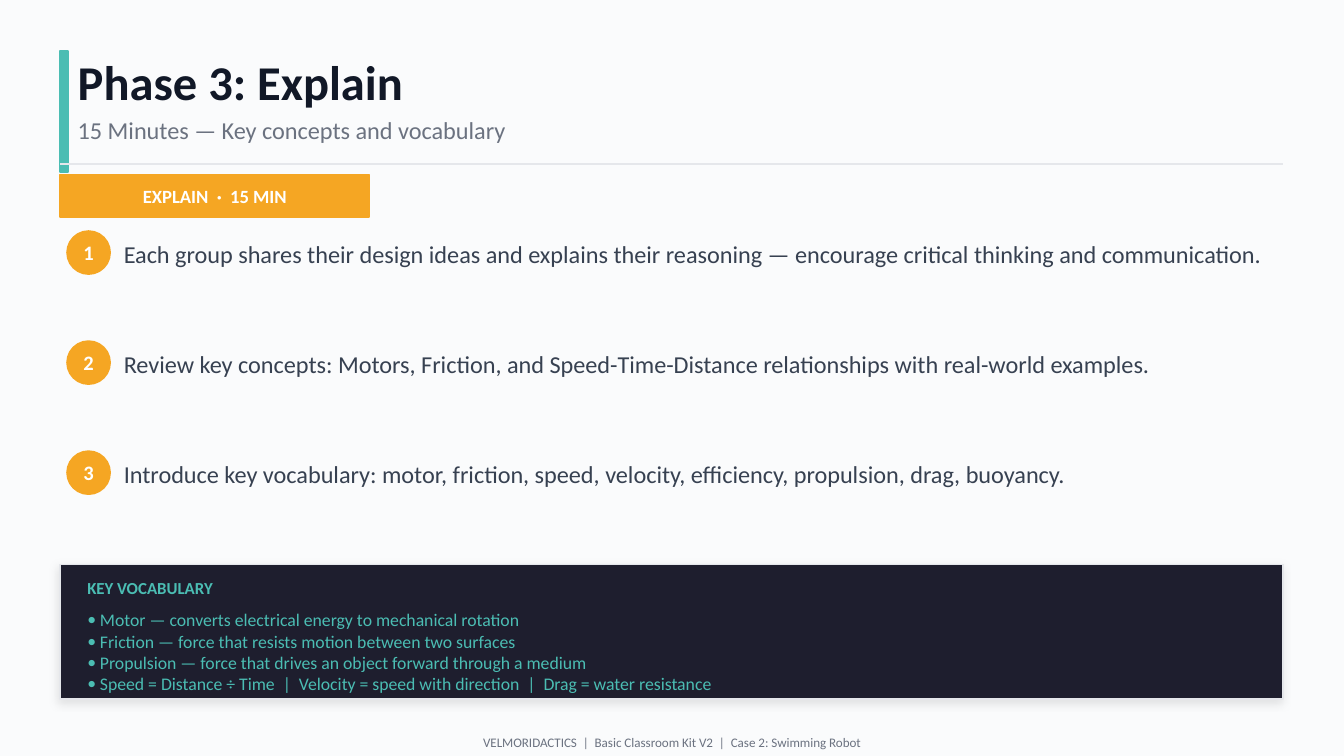
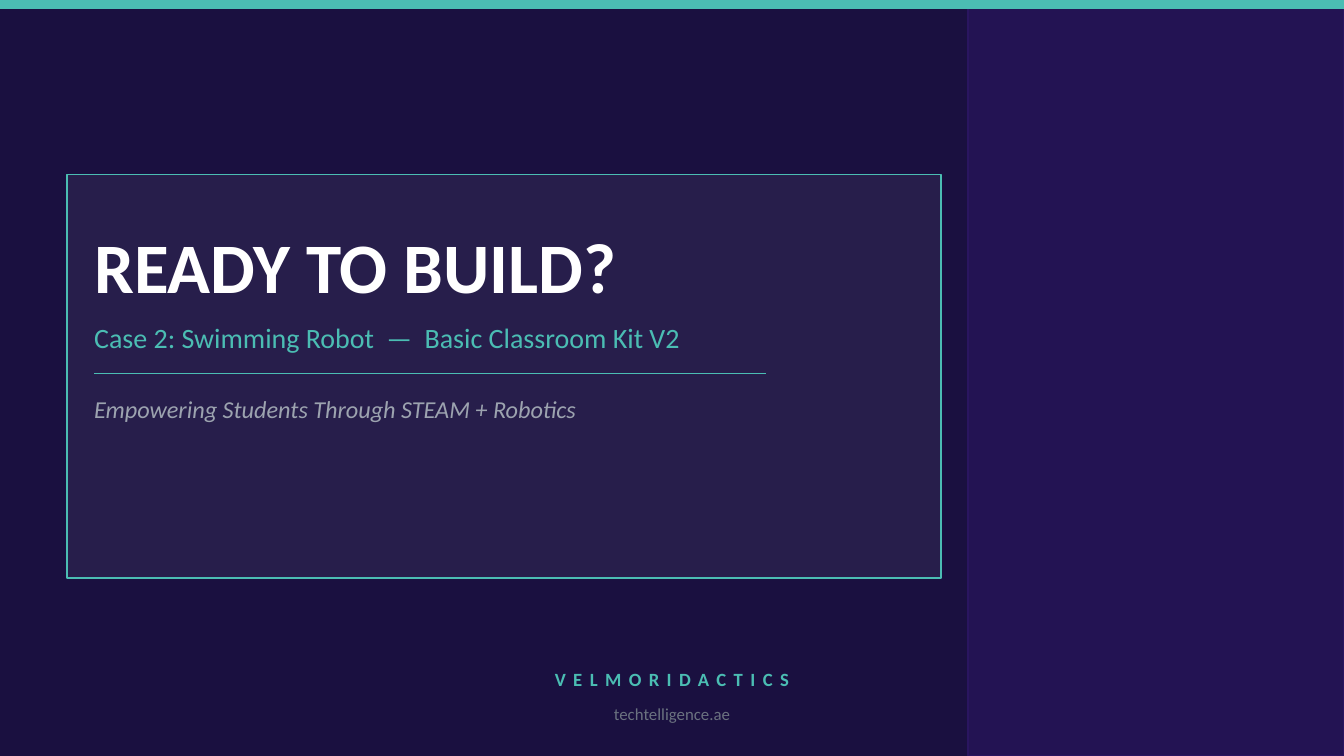
from lxml.etree import SubElement
from pptx import Presentation
from pptx.dml.color import RGBColor
from pptx.enum.shapes import MSO_CONNECTOR, MSO_SHAPE
from pptx.enum.text import MSO_ANCHOR, PP_ALIGN
from pptx.oxml.ns import qn
from pptx.util import Cm, Pt

# Content
BRAND = "VELMORIDACTICS"
KIT = "Basic Classroom Kit V2"
CASE = "Case 2: Swimming Robot"
EXPLAIN = {
    "title": "Phase 3: Explain",
    "subtitle": "15 Minutes — Key concepts and vocabulary",
    "badge": "EXPLAIN  ·  15 MIN",
    "steps": [
        "Each group shares their design ideas and explains their reasoning — "
        "encourage critical thinking and communication.",
        "Review key concepts: Motors, Friction, and Speed-Time-Distance "
        "relationships with real-world examples.",
        "Introduce key vocabulary: motor, friction, speed, velocity, "
        "efficiency, propulsion, drag, buoyancy.",
    ],
    "panel": "KEY VOCABULARY",
    "vocabulary": [
        "Motor — converts electrical energy to mechanical rotation",
        "Friction — force that resists motion between two surfaces",
        "Propulsion — force that drives an object forward through a medium",
        "Speed = Distance ÷ Time  |  Velocity = speed with direction  |  "
        "Drag = water resistance",
    ],
    "footer": f"{BRAND}  |  {KIT}  |  {CASE}",
}
CLOSING = {
    "title": "READY TO BUILD?",
    "subtitle": f"{CASE}  —  {KIT}",
    "motto": "Empowering Students Through STEAM + Robotics",
    "brand": BRAND,
    "site": "techtelligence.ae",
}

# Shared style
COLORS = {
    "teal": "4BBDB3", "amber": "F5A623", "ink": "111827", "body": "374151",
    "gray": "6B7280", "silver": "9CA3AF", "rule": "E5E7EB", "white": "FFFFFF",
    "paper": "FAFBFC", "panel": "1E1E2E", "night": "1A1040",
    "violet": "2A1560", "black": "000000",
}
STYLES = {
    "title": {"size": 26, "color": "ink", "bold": True},
    "subtitle": {"size": 13, "color": "gray"},
    "badge": {"size": 10, "color": "white", "bold": True},
    "number": {"size": 11, "color": "white", "bold": True},
    "step": {"size": 13, "color": "body"},
    "panel": {"size": 9, "color": "teal", "bold": True},
    "vocabulary": {"size": 9.5, "color": "teal"},
    "footer": {"size": 7, "color": "gray"},
    "hero": {"size": 38, "color": "white", "bold": True},
    "lead": {"size": 15, "color": "teal"},
    "motto": {"size": 13, "color": "silver", "italic": True},
    "brand": {"size": 10, "color": "teal", "bold": True},
    "site": {"size": 9, "color": "gray"},
}
SLIDE_W, SLIDE_H = 25.4, 14.29
MARGIN, CONTENT_W = 1.14, 23.11


def rgb(name):
    return RGBColor.from_string(COLORS[name])


def new_slide(prs, background):
    s = prs.slides.add_slide(prs.slide_layouts[6])
    s.background.fill.solid()
    s.background.fill.fore_color.rgb = rgb(background)
    return s


def write(tf, lines, style, center=False, bullet=None, tracking=None):
    tf.word_wrap = True
    tf.vertical_anchor = MSO_ANCHOR.MIDDLE
    for side in ("left", "top", "right", "bottom"):
        setattr(tf, f"margin_{side}", 0)
    for i, line in enumerate(lines):
        p = tf.paragraphs[0] if i == 0 else tf.add_paragraph()
        p.alignment = PP_ALIGN.CENTER if center else PP_ALIGN.LEFT
        if bullet:
            ppr = p._p.get_or_add_pPr()
            ppr.set("marL", str(Cm(bullet)))
            ppr.set("indent", str(-Cm(bullet)))
            SubElement(ppr, qn("a:buFont"), typeface="Calibri")
            SubElement(ppr, qn("a:buChar"), char="•")
        r = p.add_run()
        r.text = line
        r.font.name = "Calibri"
        for key, value in STYLES[style].items():
            if key == "color":
                r.font.color.rgb = rgb(value)
            else:
                setattr(r.font, key, Pt(value) if key == "size" else value)
        if tracking:
            r._r.get_or_add_rPr().set("spc", str(tracking * 100))


def text(s, box, lines, style, **options):
    lines = [lines] if isinstance(lines, str) else lines
    write(s.shapes.add_textbox(*map(Cm, box)).text_frame, lines, style, **options)


def shape(s, box, fill, line=None, kind=MSO_SHAPE.RECTANGLE, alpha=None):
    sp = s.shapes.add_shape(kind, *map(Cm, box))
    sp.shadow.inherit = False
    sp.fill.solid()
    sp.fill.fore_color.rgb = rgb(fill)
    if alpha:
        color = sp._element.spPr.find(f"{qn('a:solidFill')}/{qn('a:srgbClr')}")
        SubElement(color, qn("a:alpha"), val=str(alpha * 1000))
    sp.line.color.rgb = rgb(line or fill)
    sp.line.width = Pt(1)
    return sp


def drop_shadow(sp, blur=5, distance=2, angle=135, alpha=10):
    effects = sp._element.spPr.find(qn("a:effectLst"))
    outer = SubElement(effects, qn("a:outerShdw"), blurRad=str(Pt(blur)),
                       dist=str(Pt(distance)), dir=str(angle * 60000),
                       algn="bl", rotWithShape="0")
    color = SubElement(outer, qn("a:srgbClr"), val=COLORS["black"])
    SubElement(color, qn("a:alpha"), val=str(alpha * 1000))


def rule(s, x, y, width, color):
    ends = map(Cm, (x, y, x + width, y))
    line = s.shapes.add_connector(MSO_CONNECTOR.STRAIGHT, *ends)
    line.line.color.rgb = rgb(color)
    line.line.width = Pt(1)
    SubElement(line._element.spPr, qn("a:effectLst"))


def explain_slide(prs):
    s = new_slide(prs, "paper")

    # Header
    shape(s, (MARGIN, 0.97, 0.15, 2.29), "teal")
    text(s, (1.47, 0.89, 21.59, 1.27), EXPLAIN["title"], "title")
    text(s, (1.47, 2.08, 21.59, 0.76), EXPLAIN["subtitle"], "subtitle")
    rule(s, MARGIN, 3.1, CONTENT_W, "rule")
    badge = shape(s, (MARGIN, 3.3, 5.84, 0.81), "amber")
    write(badge.text_frame, [EXPLAIN["badge"]], "badge", center=True)

    # Numbered steps
    top, pitch, dot = 4.37, 2.08, 0.81
    for i, step in enumerate(EXPLAIN["steps"]):
        y = top + i * pitch
        circle = shape(s, (1.27, y, dot, dot), "amber", kind=MSO_SHAPE.OVAL)
        write(circle.text_frame, [str(i + 1)], "number", center=True)
        text(s, (2.34, y - 0.05, 21.59, 0.97), step, "step")

    # Vocabulary panel
    drop_shadow(shape(s, (MARGIN, 10.67, CONTENT_W, 2.54), "panel", "rule"))
    text(s, (1.65, 10.8, 6.35, 0.64), EXPLAIN["panel"], "panel")
    text(s, (1.65, 11.48, 22.1, 1.68), EXPLAIN["vocabulary"], "vocabulary",
         bullet=0.24)

    # Footer
    text(s, (0, 13.77, SLIDE_W, 0.51), EXPLAIN["footer"], "footer", center=True)


def closing_slide(prs):
    s = new_slide(prs, "night")

    # Side and top bands
    shape(s, (18.29, 0, 7.11, SLIDE_H), "violet", alpha=60)
    shape(s, (0, 0, SLIDE_W, 0.15), "teal")

    # Call to action
    x, width = 1.78, 15.49
    shape(s, (1.27, 3.3, 16.51, 7.62), "white", "teal", alpha=6)
    text(s, (x, 4.19, width, 1.65), CLOSING["title"], "hero")
    text(s, (x, 5.97, width, 0.81), CLOSING["subtitle"], "lead")
    rule(s, x, 7.06, 12.7, "teal")
    text(s, (x, 7.37, width, 0.71), CLOSING["motto"], "motto")

    # Sign-off
    text(s, (0, 12.45, SLIDE_W, 0.76), CLOSING["brand"], "brand",
         center=True, tracking=4)
    text(s, (0, 13.21, SLIDE_W, 0.56), CLOSING["site"], "site", center=True)


def main():
    prs = Presentation()
    prs.slide_width, prs.slide_height = Cm(SLIDE_W), Cm(SLIDE_H)
    explain_slide(prs)
    closing_slide(prs)
    prs.save("out.pptx")


if __name__ == "__main__":
    main()
